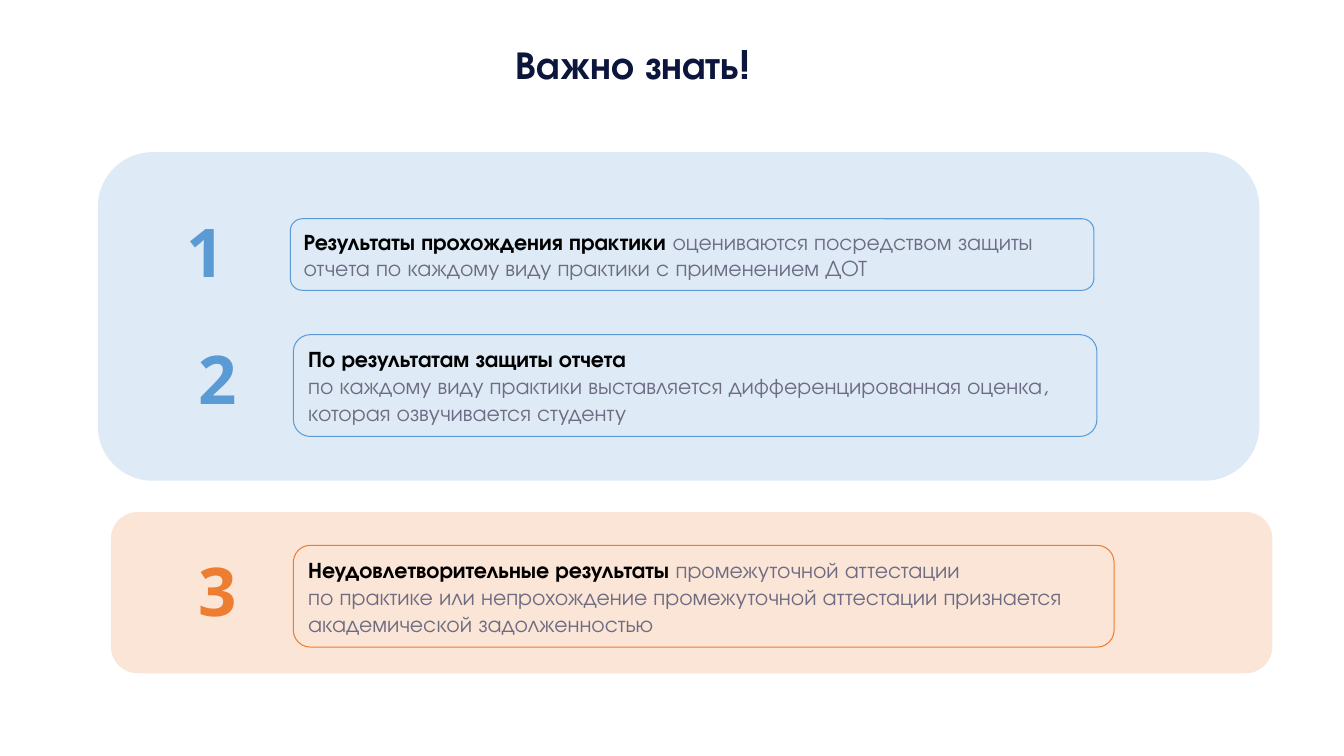
from pptx import Presentation, util as u
from pptx.dml.color import RGBColor
from pptx.enum import shapes, text

PX = 9144  # 100 px to the inch
HUES = {"navy": "0C153C", "black": "000000", "grey": "6E6C83",
        "blue": "5B9BD5", "pale": "DEEBF7",
        "orange": "ED7D31", "peach": "FBE5D6"}
HEAD, DIGIT = "TeX Gyre Adventor", "Open Sans"


def color(name):
    return RGBColor.from_string(HUES[name])


class Deck:
    def __init__(self, wide, high):
        self.prs = Presentation()
        self.prs.slide_width, self.prs.slide_height = wide * PX, high * PX
        self.slide = self.prs.slides.add_slide(self.prs.slide_layouts[5])

    def font(self, run, size, hue, bold=True, face=HEAD):
        font = run.font
        font.name, font.size, font.bold = face, u.Pt(size), bold
        font.color.rgb = color(hue)

    def title(self, words, *area):
        shape = self.slide.shapes.title
        shape.left, shape.top, shape.width, shape.height = [n * PX for n in area]
        frame = shape.text_frame
        frame.text = words
        frame.word_wrap = True
        frame.auto_size = text.MSO_AUTO_SIZE.NONE
        frame.vertical_anchor = text.MSO_ANCHOR.TOP
        frame.margin_left = frame.margin_right = 13 * PX
        frame.margin_top = frame.margin_bottom = 13 * PX
        para = frame.paragraphs[0]
        para.alignment = text.PP_ALIGN.CENTER
        para.line_spacing, para.space_before = 0.9, u.Pt(7.5)
        self.font(para.runs[0], 28, "navy")

    def panel(self, area, fill=None, line=None):
        """Add a rounded box with a fill, an outline or both."""
        shape = self.slide.shapes.add_shape(
            shapes.MSO_SHAPE.ROUNDED_RECTANGLE, *[n * PX for n in area])
        shape.shadow.inherit = False
        if fill:
            shape.fill.solid()
            shape.fill.fore_color.rgb = color(fill)
        else:
            shape.fill.background()
        if line:
            shape.line.color.rgb = color(line)
            shape.line.width = u.Pt(0.75)
        else:
            shape.line.fill.background()
        return shape

    def note(self, area, line, paras):
        """Add an outlined box; each paragraph is a list of (words, bold)."""
        frame = self.panel(area, line=line).text_frame
        frame.word_wrap = True
        frame.auto_size = text.MSO_AUTO_SIZE.SHAPE_TO_FIT_TEXT
        for i, parts in enumerate(paras):
            para = frame.add_paragraph() if i else frame.paragraphs[0]
            para.alignment = text.PP_ALIGN.LEFT
            for words, bold in parts:
                run = para.add_run()
                run.text = words
                self.font(run, 16, "black" if bold else "grey", bold)

    def digit(self, words, area, hue, wrap):
        box = self.slide.shapes.add_textbox(*[n * PX for n in area])
        frame = box.text_frame
        frame.text = words
        frame.word_wrap = wrap
        frame.auto_size = text.MSO_AUTO_SIZE.SHAPE_TO_FIT_TEXT
        self.font(frame.paragraphs[0].runs[0], 48, hue, face=DIGIT)


def main():
    deck = Deck(1333, 750)
    deck.title("Важно знать!", 175, 32, 906, 89)

    deck.panel((97, 151, 1152, 326), fill="pale")
    deck.note((288, 217, 797, 71), "blue", [
        [("Результаты прохождения практики ", True),
         ("оцениваются посредством защиты отчета по каждому виду практики "
          "с применением ДОТ", False)]])
    deck.digit("1", (175, 204, 225, 91), "blue", True)
    deck.note((291, 332, 797, 101), "blue", [
        [("По результатам защиты отчета", True)],
        [("по каждому виду практики выставляется дифференцированная оценка, "
          "которая озвучивается студенту", False)]])
    deck.digit("2", (187, 330, 225, 91), "blue", True)

    deck.panel((110, 508, 1152, 160), fill="peach")
    deck.note((291, 541, 814, 101), "orange", [
        [("Неудовлетворительные результаты ", True),
         ("промежуточной аттестации", False)],
        [("по практике или непрохождение промежуточной аттестации признается "
          "академической задолженностью", False)]])
    deck.digit("3", (187, 540, 58, 91), "orange", False)

    deck.prs.save("out.pptx")


if __name__ == "__main__":
    main()
